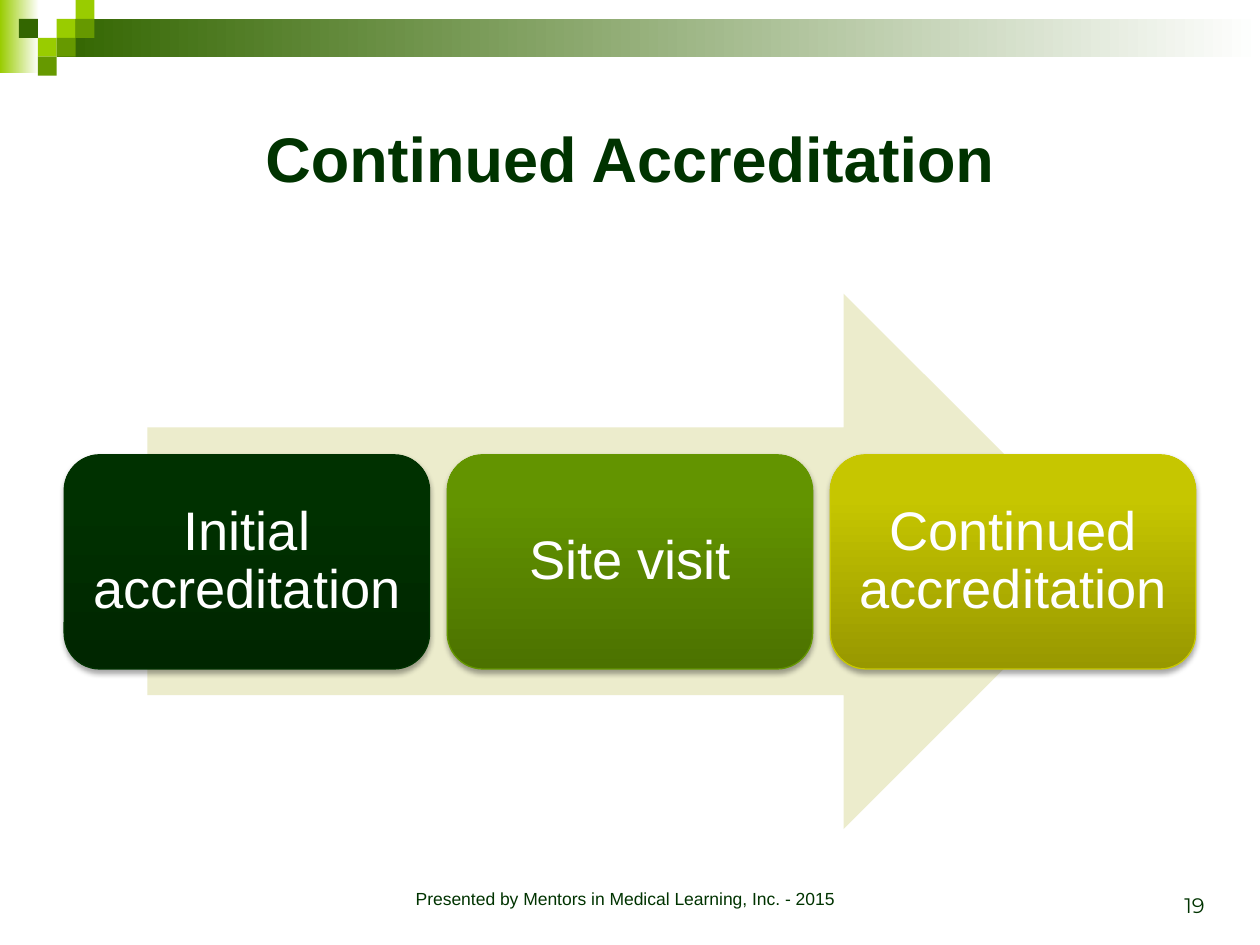
from copy import deepcopy

from lxml import etree
from pptx import Presentation
from pptx.dml.color import RGBColor
from pptx.enum.shapes import MSO_SHAPE
from pptx.enum.text import MSO_ANCHOR, PP_ALIGN
from pptx.oxml.ns import qn
from pptx.util import Inches, Pt

RECT, ROUNDED, ARROW = (MSO_SHAPE.RECTANGLE, MSO_SHAPE.ROUNDED_RECTANGLE,
                        MSO_SHAPE.RIGHT_ARROW)
LEFT_TO_RIGHT, BOTTOM_TO_TOP = 0, 90
TOP, MIDDLE, BOTTOM = MSO_ANCHOR.TOP, MSO_ANCHOR.MIDDLE, MSO_ANCHOR.BOTTOM
CENTER, RIGHT = PP_ALIGN.CENTER, PP_ALIGN.RIGHT

SLIDE_W, SLIDE_H = 10, 7.5
TILE = 0.15                                   # side of a checker tile
STEP_LEFT, STEP_TOP, STEP_W, STEP_H, STEP_GAP = 0.51, 3.61, 2.9, 1.7, 0.14

COLORS = {
    "text": "003300", "white": "FFFFFF", "arrow": "ECECCC", "shadow": "000000",
    "lime": "99CC00", "leaf": "669900", "forest": "336600",
}

# Column, row and colour of each tile in the corner
TILES = [(3, 1, "lime"), (4, 0, "lime"), (4, 1, "leaf"), (2, 2, "lime"),
         (1, 1, "forest"), (3, 2, "leaf"), (2, 3, "leaf")]

# Label, gradient from bottom to top, outline
STEPS = [
    ("Initial accreditation", ("002600", "003100", "003200"), "003200"),
    ("Site visit", ("4C7200", "639400", "639500"), "649600"),
    ("Continued accreditation", ("989800", "C6C600", "C7C700"), "C8C800"),
]


def rgb(color):
    return RGBColor.from_string(COLORS.get(color, color))


def add_block(slide, kind, left, top, width, height, color=None):
    block = slide.shapes.add_shape(
        kind, Inches(left), Inches(top), Inches(width), Inches(height))
    block.shadow.inherit = False
    block.line.fill.background()
    if color:
        block.fill.solid()
        block.fill.fore_color.rgb = rgb(color)
    return block


def fill_gradient(block, stops, angle):
    """Fill with (position, colour) stops; two or more are allowed."""
    block.fill.gradient()
    block.fill.gradient_angle = angle
    stop_list = next(block._element.spPr.iter(qn("a:gsLst")))
    while len(stop_list) < len(stops):
        stop_list.append(deepcopy(stop_list[-1]))
    for stop, (position, color) in zip(block.fill.gradient_stops, stops):
        stop.position = position
        stop.color.rgb = rgb(color)


def add_soft_shadow(block):
    effects = block._element.spPr.find(qn("a:effectLst"))
    shadow = etree.SubElement(
        effects, qn("a:outerShdw"), blurRad=str(Pt(3.1)), dist=str(Pt(1.8)),
        dir="5400000", rotWithShape="0")
    tint = etree.SubElement(shadow, qn("a:srgbClr"), val=COLORS["shadow"])
    etree.SubElement(tint, qn("a:alpha"), val="35000")


def write(frame, text, size, color="text", font="Arial", bold=False,
          align=CENTER, anchor=TOP):
    frame.word_wrap = True
    frame.vertical_anchor = anchor
    frame.text = text
    paragraph = frame.paragraphs[0]
    paragraph.alignment = align
    style = paragraph.runs[0].font
    style.name, style.size, style.bold = font, Pt(size), bold
    style.color.rgb = rgb(color)
    return paragraph


def add_label(slide, left, top, width, height, text, size, **style):
    label = slide.shapes.add_textbox(
        Inches(left), Inches(top), Inches(width), Inches(height))
    write(label.text_frame, text, size, **style)


def add_header(slide):
    glow = add_block(slide, RECT, 0, 0, 0.31, 0.58)
    fill_gradient(glow, [(0, "lime"), (1, "white")], LEFT_TO_RIGHT)
    band_left = 3 * TILE
    band = add_block(slide, RECT, band_left, TILE, SLIDE_W - band_left, 2 * TILE)
    fill_gradient(band, [(0, "forest"), (1, "white")], LEFT_TO_RIGHT)
    for column, row, color in TILES:
        add_block(slide, RECT, column * TILE, row * TILE, TILE, TILE, color)


def add_step(slide, column, label, shades, outline):
    left = STEP_LEFT + column * (STEP_W + STEP_GAP)
    step = add_block(slide, ROUNDED, left, STEP_TOP, STEP_W, STEP_H)
    fill_gradient(step, list(zip((0, 0.8, 1), shades)), BOTTOM_TO_TOP)
    step.line.color.rgb = rgb(outline)
    step.line.width = Pt(0.75)
    add_soft_shadow(step)
    frame = step.text_frame
    frame.margin_left = frame.margin_right = Inches(0.13)
    frame.margin_top = frame.margin_bottom = Inches(0.13)
    write(frame, label, 31, color="white", anchor=MIDDLE).line_spacing = 0.9


def main():
    deck = Presentation()
    deck.slide_width, deck.slide_height = Inches(SLIDE_W), Inches(SLIDE_H)
    slide = deck.slides.add_slide(deck.slide_layouts[6])

    # Header and title
    add_header(slide)
    add_label(slide, 0.5, 0.5, 9, 1.5, "Continued Accreditation", 36,
              bold=True, anchor=MIDDLE)

    # Process: arrow behind three steps
    add_block(slide, ARROW, 1.17, 2.33, 7.65, 4.25, "arrow")
    for column, step in enumerate(STEPS):
        add_step(slide, column, *step)

    # Footer and page number
    add_label(slide, 2.75, 7, 4.42, 0.33,
              "Presented by Mentors in Medical Learning, Inc. - 2015", 10)
    add_label(slide, 7.33, 6.83, 2.33, 0.5, "19", 12, font="Montserrat",
              align=RIGHT, anchor=BOTTOM)

    deck.save("out.pptx")


if __name__ == "__main__":
    main()
